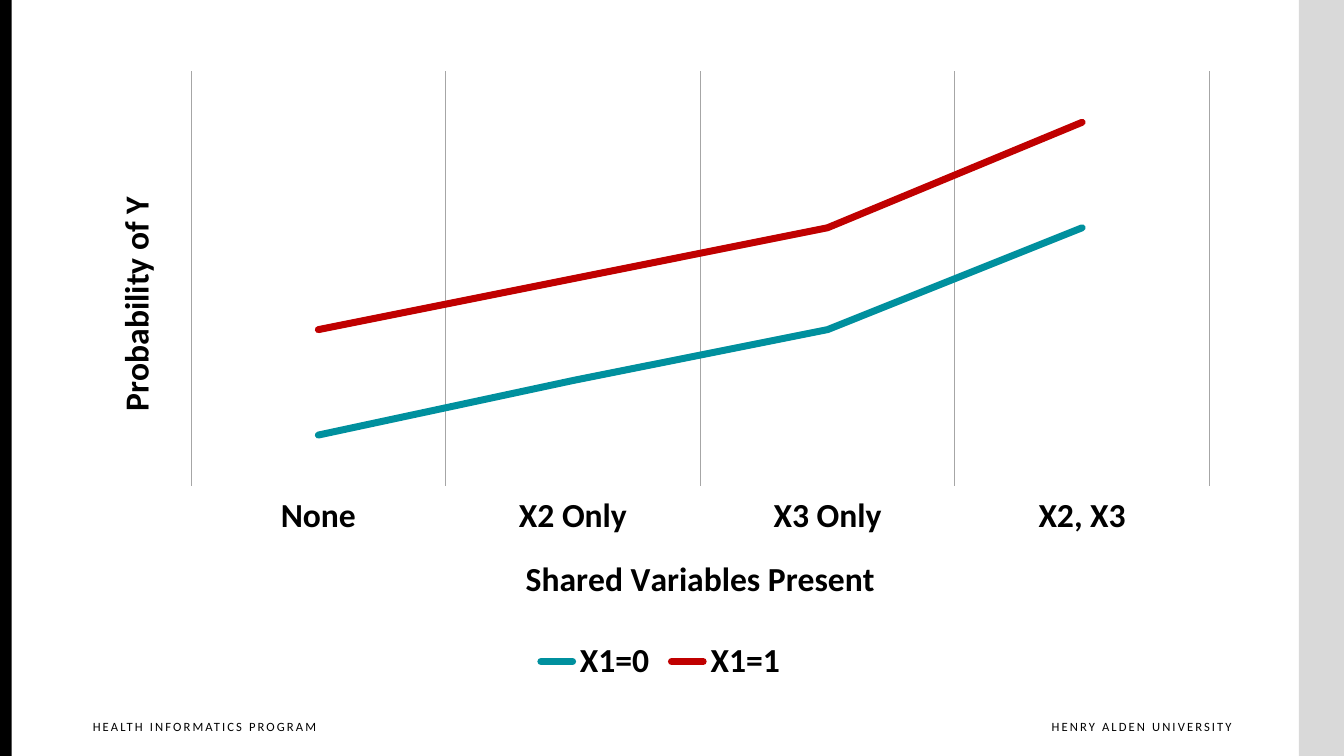
from lxml import etree
from pptx import Presentation
from pptx.chart.data import CategoryChartData
from pptx.dml.color import RGBColor
from pptx.enum.chart import XL_CHART_TYPE as CT, XL_LEGEND_POSITION as LP
from pptx.enum.chart import XL_TICK_LABEL_POSITION as TL, XL_TICK_MARK as TM
from pptx.enum.shapes import MSO_SHAPE
from pptx.enum.text import PP_ALIGN
from pptx.oxml import parse_xml
from pptx.oxml.ns import nsdecls, qn
from pptx.util import Pt

PX = 9525
FONT = "Calibri"
BLACK = RGBColor(0, 0, 0)
EDGE_GRAY = RGBColor(0xD9, 0xD9, 0xD9)
GRID_GRAY = RGBColor(0xA6, 0xA6, 0xA6)
TEAL = RGBColor(0x00, 0x90, 0x9E)
RED = RGBColor(0xC0, 0, 0)

CATEGORIES = ["None", "X2 Only", "X3 Only", "X2, X3"]
SERIES = [("X1=0", [14, 29, 43, 71], TEAL), ("X1=1", [43, 57, 71, 100], RED)]


def emu(box):
    return [v * PX for v in box]


def set_font(font, size, bold=False):
    font.name, font.size, font.bold = FONT, Pt(size), bold
    font.color.rgb = BLACK


def add_bar(s, box, color):
    sp = s.shapes.add_shape(MSO_SHAPE.RECTANGLE, *emu(box))
    sp.shadow.inherit = False
    sp.fill.solid()
    sp.fill.fore_color.rgb = color
    sp.line.fill.background()


def add_footer(s, box, text, align):
    tf = s.shapes.add_textbox(*emu(box)).text_frame
    tf.word_wrap = True
    tf.margin_right = 0
    p = tf.paragraphs[0]
    p.alignment = align
    r = p.add_run()
    r.text = text
    set_font(p.font, 9)
    r.font._element.set("spc", "150")


def set_axis_title(axis, text):
    tf = axis.axis_title.text_frame
    tf.text = text
    set_font(tf.paragraphs[0].font, 24, True)


def set_plot_box(chart, box, plot):
    x, y, w, h = box
    left, top, width, height = plot
    layout = parse_xml(f"<c:layout {nsdecls('c')}><c:manualLayout/></c:layout>")
    settings = [("layoutTarget", "inner"), ("xMode", "edge"), ("yMode", "edge"),
                ("x", left / w), ("y", top / h),
                ("w", width / w), ("h", height / h)]
    for tag, value in settings:
        etree.SubElement(layout[0], qn(f"c:{tag}")).set("val", str(value))
    area = chart._chartSpace.chart.plotArea
    for old in area.findall(qn("c:layout")):
        area.remove(old)
    area.insert(0, layout)


def add_probability_chart(s, box):
    data = CategoryChartData()
    data.categories = CATEGORIES
    for name, values, _ in SERIES:
        data.add_series(name, values)
    chart = s.shapes.add_chart(CT.LINE, *emu(box), data).chart
    set_font(chart.font, 24, True)
    chart.has_title = False
    chart.has_legend = True
    chart.legend.position = LP.BOTTOM
    chart.legend.include_in_layout = False
    set_font(chart.legend.font, 24, True)

    cat = chart.category_axis
    cat.tick_label_position = TL.LOW
    cat.has_major_gridlines = True
    cat.major_gridlines.format.line.color.rgb = GRID_GRAY
    cat.major_gridlines.format.line.width = Pt(0.75)
    set_axis_title(cat, "Shared Variables Present")

    val = chart.value_axis
    val.minimum_scale, val.maximum_scale = 0, 114
    val.has_major_gridlines = False
    val.tick_label_position = TL.NONE
    set_axis_title(val, "Probability of Y")

    for axis in (cat, val):
        axis.major_tick_mark = axis.minor_tick_mark = TM.NONE
        axis.format.line.fill.background()

    chart.plots[0].vary_by_categories = False
    for ser, (_, _, color) in zip(chart.plots[0].series, SERIES):
        ser.smooth = False
        ser.format.line.color.rgb = color
        ser.format.line.width = Pt(5)
        ser.format.line._get_or_add_ln().set("cap", "rnd")
    set_plot_box(chart, box, (97, 12, 970, 395))


def main():
    prs = Presentation()
    prs.slide_width, prs.slide_height = 1280 * PX, 720 * PX
    s = prs.slides.add_slide(prs.slide_layouts[6])
    add_bar(s, (1237, 0, 43, 720), EDGE_GRAY)
    add_bar(s, (0, 0, 11, 720), BLACK)
    add_footer(s, (947, 680, 226, 32), "HENRY ALDEN UNIVERSITY", PP_ALIGN.RIGHT)
    add_footer(s, (79, 680, 244, 32), "HEALTH INFORMATICS PROGRAM", PP_ALIGN.LEFT)
    add_probability_chart(s, (85, 56, 1088, 600))
    prs.save("out.pptx")


if __name__ == "__main__":
    main()
